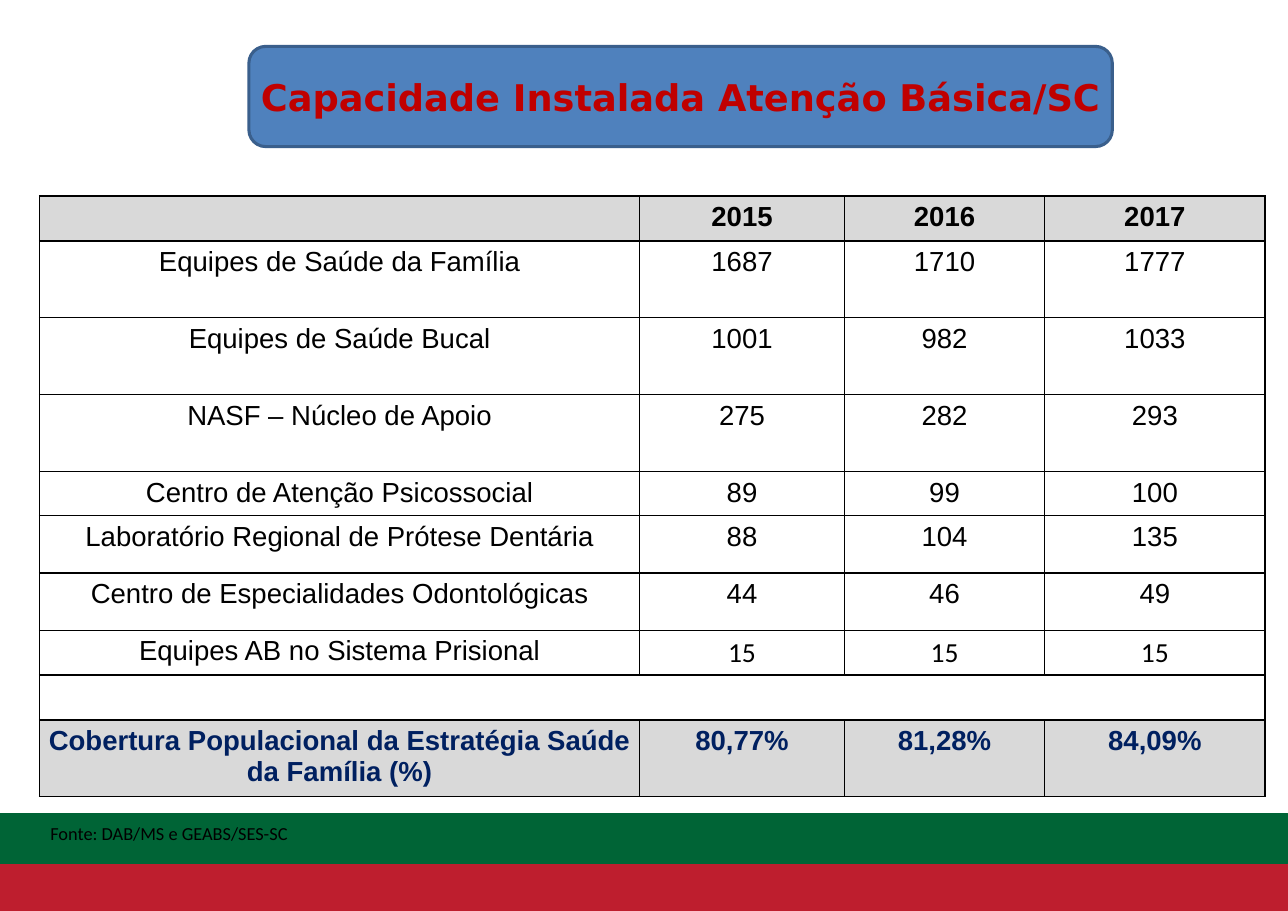
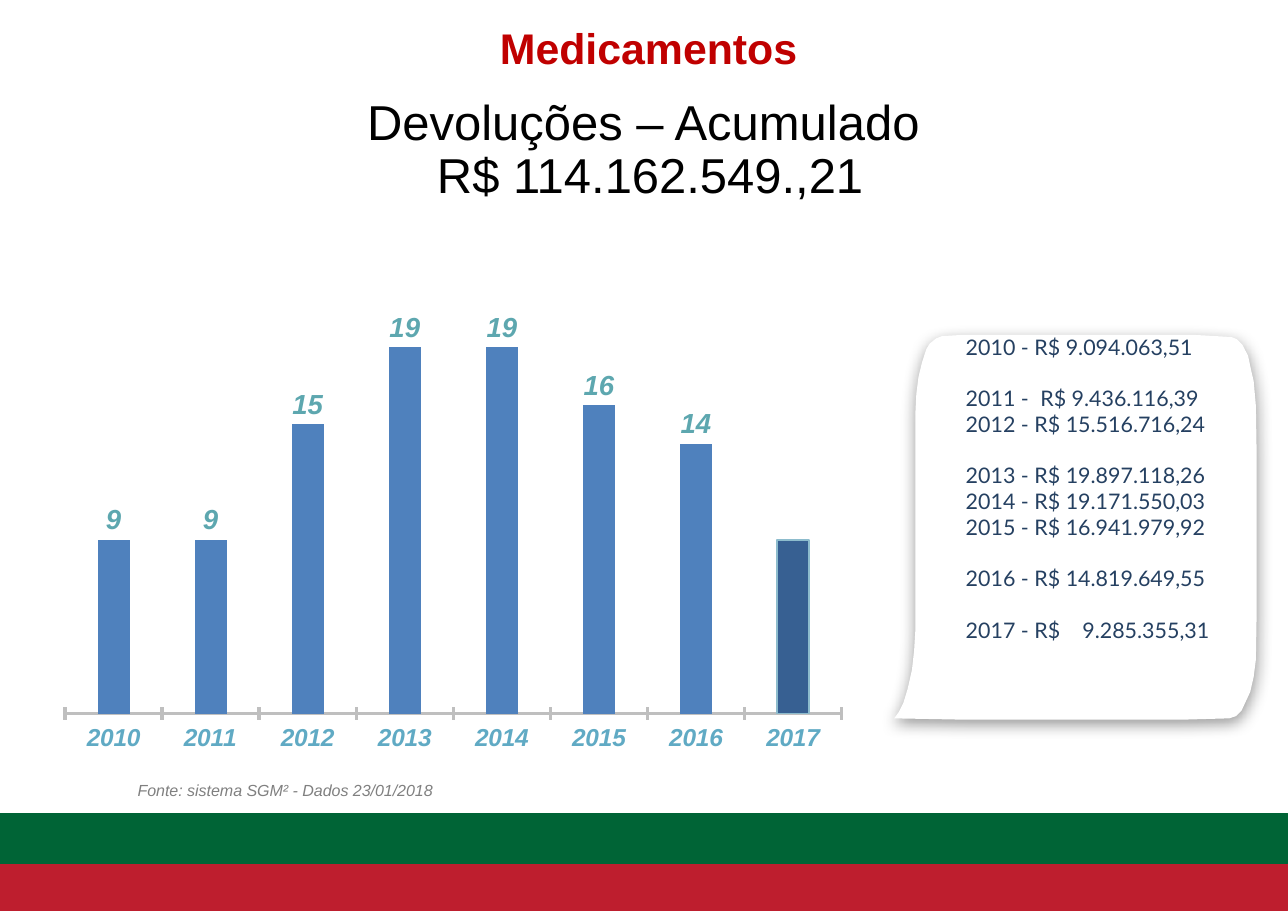
from dataclasses import dataclass

from lxml import etree
from pptx import Presentation
from pptx.chart.data import CategoryChartData
from pptx.dml.color import RGBColor
from pptx.enum.chart import XL_CHART_TYPE, XL_LABEL_POSITION, XL_TICK_MARK
from pptx.enum.shapes import MSO_SHAPE
from pptx.enum.text import MSO_ANCHOR, PP_ALIGN
from pptx.oxml import parse_xml
from pptx.oxml.ns import nsdecls, qn
from pptx.util import Cm, Pt


@dataclass(frozen=True)
class Theme:
    green: str = "006436"
    red: str = "BE1E2E"
    title: str = "C00000"
    blue: str = "4F81BD"
    blue_edge: str = "3A5F8C"
    partial_year: str = "376092"
    partial_edge: str = "8DBCCD"
    axis: str = "BFBFBF"
    year: str = "60AAC4"
    value: str = "5DA7AF"
    amount: str = "254061"
    coverage: str = "002060"
    shade: str = "D9D9D9"
    muted: str = "808080"
    black: str = "000000"
    white: str = "FFFFFF"
    headline_size: float = 32
    title_size: float = 28
    banner_size: float = 24
    body_size: float = 18
    axis_size: float = 16
    amount_size: float = 14
    source_size: float = 12
    note_size: float = 10.5


theme = Theme()


def paint(shape, fill, line=None, width=0.75):
    shape.shadow.inherit = False
    shape.fill.solid()
    shape.fill.fore_color.rgb = RGBColor.from_string(fill)
    if line:
        shape.line.color.rgb = RGBColor.from_string(line)
        shape.line.width = Pt(width)
    else:
        shape.line.fill.background()


def style(font, size, color, name="Arial", bold=False, italic=False):
    font.size = Pt(size)
    font.color.rgb = RGBColor.from_string(color)
    font.name = name
    font.bold = bold
    font.italic = italic


prs = Presentation()
prs.slide_width = Cm(29.7)
prs.slide_height = Cm(21)

capacity, returns = [prs.slides.add_slide(prs.slide_layouts[6]) for _ in range(2)]
for slide in (capacity, returns):
    for top, color in ((19.84, theme.red), (18.75, theme.green)):
        band = slide.shapes.add_shape(MSO_SHAPE.RECTANGLE, 0, Cm(top), prs.slide_width, Cm(1.15))
        paint(band, color, color)

banner = capacity.shapes.add_shape(
    MSO_SHAPE.ROUNDED_RECTANGLE, Cm(5.74), Cm(1.07), Cm(19.91), Cm(2.31))
paint(banner, theme.blue, theme.blue_edge, 2)
banner.text_frame.word_wrap = False
banner.text_frame.vertical_anchor = MSO_ANCHOR.MIDDLE
banner_line = banner.text_frame.paragraphs[0]
banner_line.alignment = PP_ALIGN.CENTER
run = banner_line.add_run()
run.text = "Capacidade Instalada Atenção Básica/SC"
style(run.font, theme.banner_size, theme.title, "DejaVu Sans", bold=True)

capacity_rows = [
    (1.02, ("", "2015", "2016", "2017")),
    (1.77, ("Equipes de Saúde da Família", "1687", "1710", "1777")),
    (1.77, ("Equipes de Saúde Bucal", "1001", "982", "1033")),
    (1.77, ("NASF – Núcleo de Apoio", "275", "282", "293")),
    (1.02, ("Centro de Atenção Psicossocial", "89", "99", "100")),
    (1.32, ("Laboratório Regional de Prótese Dentária", "88", "104", "135")),
    (1.32, ("Centro de Especialidades Odontológicas", "44", "46", "49")),
    (1.02, ("Equipes AB no Sistema Prisional", "15", "15", "15")),
    (1.02, ("", "", "", "")),
    (1.77, ("Cobertura Populacional da Estratégia Saúde da Família (%)",
            "80,77%", "81,28%", "84,09%")),
]
column_widths = (13.84, 4.72, 4.62, 5.08)
header, prison, spacer, coverage = 0, 7, 8, 9
table = capacity.shapes.add_table(
    len(capacity_rows), len(column_widths), Cm(0.91), Cm(4.52),
    Cm(sum(column_widths)), Cm(sum(height for height, _ in capacity_rows))).table
table.first_row = False
table.horz_banding = False
for column, width in zip(table.columns, column_widths):
    column.width = Cm(width)
for r, (height, entries) in enumerate(capacity_rows):
    table.rows[r].height = Cm(height)
    emphasised = r in (header, coverage)
    for c, entry in enumerate(entries):
        cell = table.cell(r, c)
        cell.margin_left = cell.margin_right = Cm(0.03)
        cell.margin_top = cell.margin_bottom = Cm(0.13)
        cell_properties = cell._tc.get_or_add_tcPr()
        for edge in ("lnL", "lnR", "lnT", "lnB"):
            cell_properties.append(parse_xml(
                f'<a:{edge} {nsdecls("a")} w="{Pt(0.96)}"><a:solidFill>'
                f'<a:srgbClr val="{theme.black}"/></a:solidFill></a:{edge}>'))
        cell.fill.solid()
        cell.fill.fore_color.rgb = RGBColor.from_string(
            theme.shade if emphasised else theme.white)
        if entry:
            paragraph = cell.text_frame.paragraphs[0]
            paragraph.alignment = PP_ALIGN.CENTER
            run = paragraph.add_run()
            run.text = entry
            style(run.font, theme.body_size,
                  theme.coverage if r == coverage else theme.black,
                  "Calibri" if r == prison and c else "Arial", bold=emphasised)
table.cell(spacer, 0).merge(table.cell(spacer, len(column_widths) - 1))

source = capacity.shapes.add_textbox(Cm(0.91), Cm(18.82), Cm(8.03), Cm(1.07))
source.text_frame.word_wrap = True
run = source.text_frame.paragraphs[0].add_run()
run.text = "Fonte: DAB/MS e GEABS/SES-SC"
style(run.font, theme.source_size, theme.black, "Calibri")

yearly = CategoryChartData(number_format="0")
yearly.categories = [str(year) for year in range(2010, 2018)]
yearly.add_series("Devoluções", (9, 9, 15, 19, 19, 16, 14, 9))
chart = returns.shapes.add_chart(
    XL_CHART_TYPE.COLUMN_CLUSTERED, Cm(0.51), Cm(7.19), Cm(19.81), Cm(10.57), yearly).chart
chart.has_legend = False
chart.has_title = False
style(chart.font, theme.body_size, theme.black)
chart.value_axis.visible = False
chart.value_axis.has_major_gridlines = False
chart.value_axis.minimum_scale = 0
chart.value_axis.maximum_scale = 20
years = chart.category_axis
years.major_tick_mark = XL_TICK_MARK.CROSS
years.format.line.color.rgb = RGBColor.from_string(theme.axis)
years.format.line.width = Pt(2.25)
style(years.tick_labels.font, theme.axis_size, theme.year, bold=True, italic=True)

plot = chart.plots[0]
plot.gap_width = 204
plot.vary_by_categories = False
columns = plot.series[0]
columns.format.fill.solid()
columns.format.fill.fore_color.rgb = RGBColor.from_string(theme.blue)
last_year = columns.points[7].format
last_year.fill.solid()
last_year.fill.fore_color.rgb = RGBColor.from_string(theme.partial_year)
last_year.line.color.rgb = RGBColor.from_string(theme.partial_edge)
last_year.line.width = Pt(0.75)
labels = columns.data_labels
labels.show_value = True
labels.position = XL_LABEL_POSITION.OUTSIDE_END
style(labels.font, theme.body_size, theme.value, bold=True, italic=True)
labels._element.insert(0, parse_xml(
    f'<c:dLbl {nsdecls("c")}><c:idx val="7"/><c:delete val="1"/></c:dLbl>'))

plot_area = chart._chartSpace.chart.plotArea
for old_layout in plot_area.findall(qn("c:layout")):
    plot_area.remove(old_layout)
plot_area.insert(0, parse_xml(
    f'<c:layout {nsdecls("c")}><c:manualLayout><c:layoutTarget val="inner"/>'
    '<c:xMode val="edge"/><c:yMode val="edge"/><c:x val="0.05"/><c:y val="0.034"/>'
    '<c:w val="0.904"/><c:h val="0.842"/></c:manualLayout></c:layout>'))

sheet_outline = [
    (2062, 1656), (2220, 1659), (2728, 1659), (2835, 1656), (2850, 1651), (2863, 1638),
    (2870, 1623), (2883, 1595), (2891, 1560), (2896, 1521), (2898, 1402), (2898, 1057),
    (2896, 935), (2891, 879), (2885, 853), (2878, 820), (2865, 795), (2852, 782),
    (2840, 777), (2753, 772), (2220, 772), (2172, 775), (2159, 780), (2144, 792),
    (2136, 805), (2126, 836), (2118, 869), (2113, 909), (2111, 950), (2111, 1450),
    (2108, 1499), (2103, 1544), (2093, 1588), (2083, 1621), (2073, 1641),
]
builder = returns.shapes.build_freeform(*sheet_outline[0], scale=Cm(0.01))
builder.add_line_segments(sheet_outline[1:], close=True)
sheet = builder.convert_to_shape()
paint(sheet, theme.white)
sheet_effects = sheet._element.spPr.find(qn("a:effectLst"))
shadow = etree.SubElement(sheet_effects, qn("a:outerShdw"), blurRad=str(Pt(10)),
                          dist=str(Pt(3)), dir="5400000", algn="ctr", rotWithShape="0")
shadow_color = etree.SubElement(shadow, qn("a:srgbClr"), val=theme.black)
etree.SubElement(shadow_color, qn("a:alpha"), val="40000")

amounts = [
    ("2010 - R$ 9.094.063,51", False, None),
    ("2011 -\tR$ 9.436.116,39", True, 1.72),
    ("2012 - R$ 15.516.716,24", False, None),
    ("2013 - R$ 19.897.118,26", True, None),
    ("2014 - R$ 19.171.550,03", False, None),
    ("2015 - R$ 16.941.979,92", False, None),
    ("2016 - R$ 14.819.649,55", True, None),
    ("2017 - R$\t9.285.355,31", True, 2.69),
]
amount_list = returns.shapes.add_textbox(Cm(22.02), Cm(7.57), Cm(6.78), Cm(9.83)).text_frame
amount_list.word_wrap = True
for i, (amount, gap_above, tab_stop) in enumerate(amounts):
    paragraph = amount_list.add_paragraph() if i else amount_list.paragraphs[0]
    if gap_above:
        paragraph.space_before = Pt(16.8)
    if tab_stop:
        tabs = etree.SubElement(paragraph._p.get_or_add_pPr(), qn("a:tabLst"))
        etree.SubElement(tabs, qn("a:tab"), pos=str(Cm(tab_stop)), algn="l")
    run = paragraph.add_run()
    run.text = amount
    style(run.font, theme.amount_size, theme.amount, "Lato")

note = returns.shapes.add_textbox(Cm(2.54), Cm(17.86), Cm(7.7), Cm(0.71))
note.text_frame.word_wrap = True
note_line = note.text_frame.paragraphs[0]
note_line.alignment = PP_ALIGN.RIGHT
run = note_line.add_run()
run.text = "Fonte: sistema SGM² - Dados 23/01/2018"
style(run.font, theme.note_size, theme.muted, italic=True)

subject = returns.shapes.add_textbox(Cm(11.28), Cm(0.38), Cm(7.44), Cm(1.45))
subject.text_frame.word_wrap = False
run = subject.text_frame.paragraphs[0].add_run()
run.text = "Medicamentos"
style(run.font, theme.title_size, theme.title, bold=True)

headline = returns.shapes.add_textbox(Cm(4.98), Cm(1.73), Cm(20.04), Cm(3.51))
headline.text_frame.word_wrap = True
headline.text_frame.vertical_anchor = MSO_ANCHOR.MIDDLE
headline_text = headline.text_frame.paragraphs[0]
headline_text.alignment = PP_ALIGN.CENTER
headline_text.line_spacing = 0.9
for i, line in enumerate(("Devoluções – Acumulado ", "R$ 114.162.549.,21")):
    if i:
        headline_text.add_line_break()
    run = headline_text.add_run()
    run.text = line
    style(run.font, theme.headline_size, theme.black)

prs.save("out.pptx")
